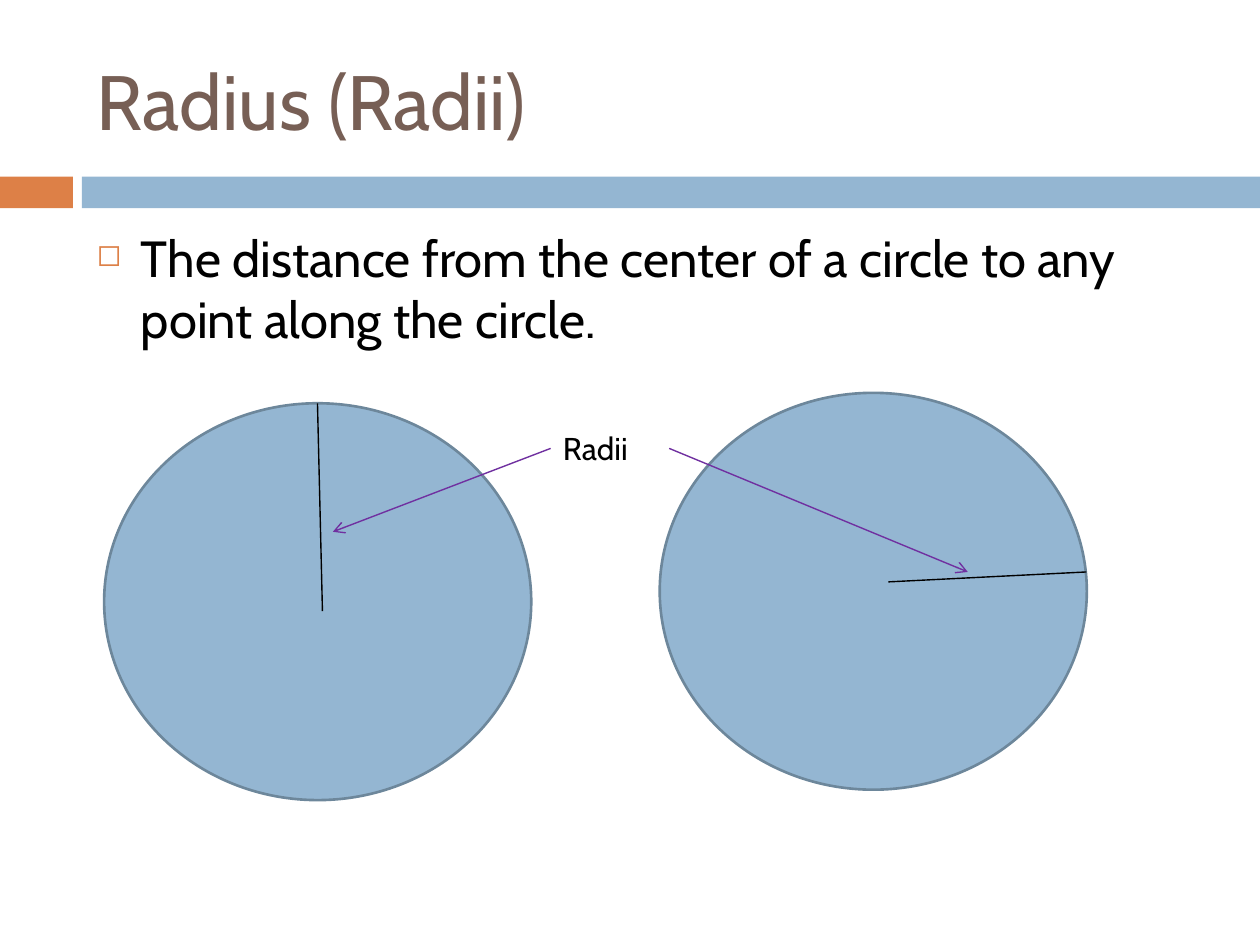
from lxml import etree
from pptx import Presentation
from pptx.dml.color import RGBColor
from pptx.enum.shapes import MSO_CONNECTOR, MSO_SHAPE
from pptx.enum.text import MSO_ANCHOR, PP_ALIGN
from pptx.oxml.ns import qn
from pptx.util import Cm, Pt

RECTANGLE, OVAL = MSO_SHAPE.RECTANGLE, MSO_SHAPE.OVAL
STRAIGHT = MSO_CONNECTOR.STRAIGHT
MIDDLE, TOP = MSO_ANCHOR.MIDDLE, MSO_ANCHOR.TOP
LEFT = PP_ALIGN.LEFT

FONT = "Cabin"
BLUE, ORANGE, BROWN = "94B6D2", "DD8047", "775F55"
OUTLINE, BLACK, PURPLE = "6D879B", "000000", "7030A0"

MARGIN, TEXT_WIDTH = 1.7, 22.66
BAND_TOP, BAND_HEIGHT = 3.56, 0.64
CIRCLE_WIDTH, CIRCLE_HEIGHT = 8.61, 8.0


def color(value):
    return RGBColor.from_string(value)


def place(shape, left, top, width, height):
    shape.left, shape.top = Cm(left), Cm(top)
    shape.width, shape.height = Cm(width), Cm(height)


def write_text(shape, text, size, font_color=BLACK, anchor=TOP, space_before=0):
    frame = shape.text_frame
    frame.word_wrap = True
    frame.vertical_anchor = anchor
    para = frame.paragraphs[0]
    para.alignment = LEFT
    para.space_before = Pt(space_before)
    span = para.add_run()
    span.text = text
    span.font.name = FONT
    span.font.size = Pt(size)
    span.font.color.rgb = color(font_color)
    return para


def add_text(page, text, left, top, width, height, **text_format):
    box = page.shapes.add_textbox(Cm(left), Cm(top), Cm(width), Cm(height))
    return write_text(box, text, **text_format)


def add_bullet(para, symbol, bullet_color, percent, indent):
    """Give the paragraph a hanging, coloured bullet."""
    properties = para._p.get_or_add_pPr()
    properties.set("marL", str(Cm(indent)))
    properties.set("indent", str(-Cm(indent)))
    tint = etree.SubElement(properties, qn("a:buClr"))
    etree.SubElement(tint, qn("a:srgbClr"), val=bullet_color)
    etree.SubElement(properties, qn("a:buSzPct"), val=str(percent * 1000))
    etree.SubElement(properties, qn("a:buChar"), char=symbol)


def add_filled(page, kind, left, top, width, height, fill, outline=None):
    shape = page.shapes.add_shape(kind, Cm(left), Cm(top), Cm(width), Cm(height))
    shape.shadow.inherit = False
    shape.fill.solid()
    shape.fill.fore_color.rgb = color(fill)
    if outline:
        shape.line.color.rgb = color(outline)
        shape.line.width = Pt(1.5)
    else:
        shape.line.fill.background()


def add_line(page, start, end, line_color, arrow=False):
    line = page.shapes.add_connector(STRAIGHT, *map(Cm, start + end))
    line.line.color.rgb = color(line_color)
    line.line.width = Pt(0.79)
    if arrow:
        etree.SubElement(line.line._get_or_add_ln(), qn("a:tailEnd"), type="arrow")
    etree.SubElement(line._element.spPr, qn("a:effectLst"))


def main():
    deck = Presentation()
    deck.slide_width, deck.slide_height = Cm(25.4), Cm(19.05)
    page = deck.slides.add_slide(deck.slide_layouts[5])

    add_filled(page, RECTANGLE, 0, BAND_TOP, 1.47, BAND_HEIGHT, ORANGE)
    add_filled(page, RECTANGLE, 1.65, BAND_TOP, 23.75, BAND_HEIGHT, BLUE)

    title = page.shapes.title
    place(title, MARGIN, 0.64, TEXT_WIDTH, 2.74)
    write_text(title, "Radius (Radii)", size=44, font_color=BROWN, anchor=MIDDLE)

    definition = add_text(
        page,
        "The distance from the center of a circle to any point along the circle.",
        MARGIN, 4.45, TEXT_WIDTH, 12.5, size=29, space_before=7)
    add_bullet(definition, "◻", ORANGE, percent=60, indent=0.89)

    for left, top in ((2.1, 8.13), (13.3, 7.92)):
        add_filled(page, OVAL, left, top, CIRCLE_WIDTH, CIRCLE_HEIGHT, BLUE, OUTLINE)

    add_line(page, (6.4, 8.13), (6.5, 12.32), BLACK)
    add_line(page, (17.91, 11.73), (21.9, 11.53), BLACK)

    add_text(page, "Radii", 11.1, 8.53, 2.39, 1.02, size=18)
    add_line(page, (11.1, 9.04), (6.71, 10.72), PURPLE, arrow=True)
    add_line(page, (13.49, 9.04), (19.51, 11.53), PURPLE, arrow=True)

    deck.save("out.pptx")


if __name__ == "__main__":
    main()
